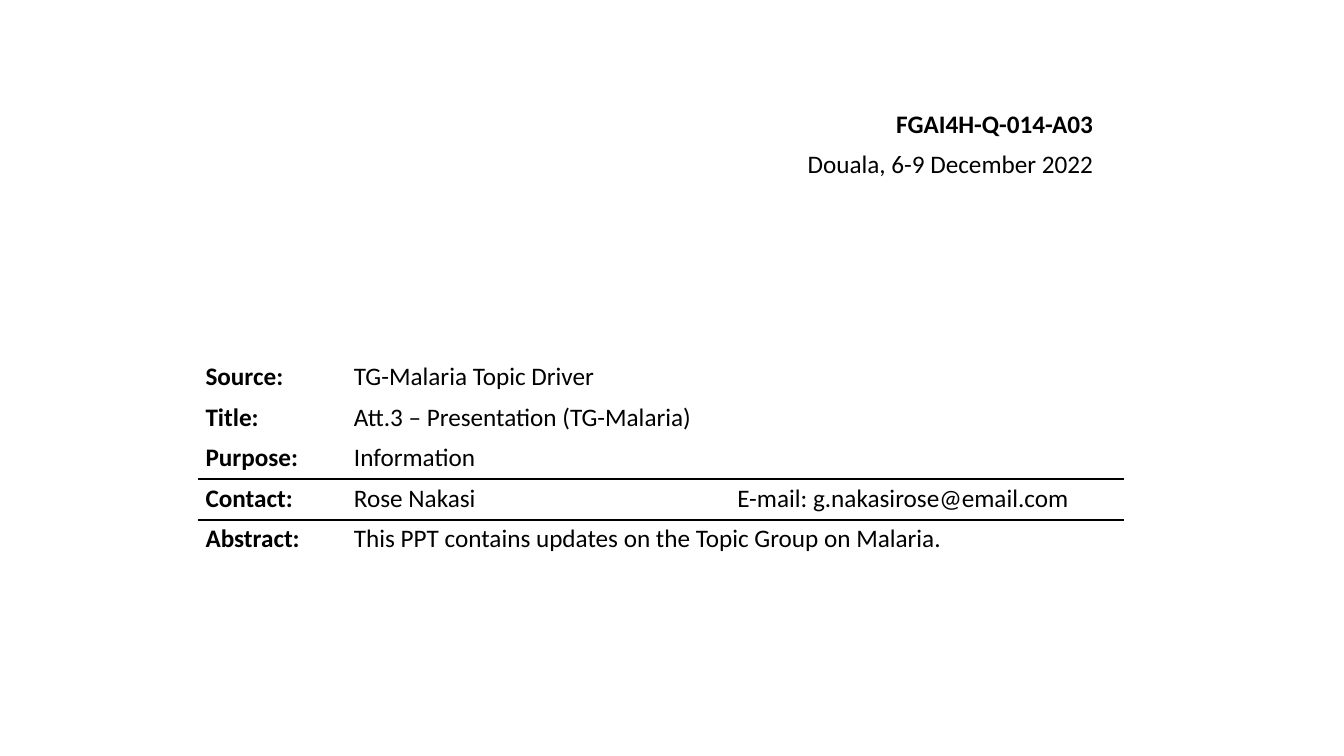
from lxml.etree import SubElement, Element
from pptx import Presentation
from pptx.dml.color import RGBColor as RGB
from pptx.enum.text import MSO_ANCHOR as Anchor, MSO_AUTO_SIZE as Fit, PP_ALIGN as Align
from pptx.oxml.ns import qn
from pptx.util import Cm, Pt

COLORS = {"ink": "000000", "paper": "FFFFFF"}
FONT = "Calibri"
PLAIN = "{2D5ABB26-0587-4C30-8999-92F81FD0307C}"  # no style, no grid
ROW = 1.02  # height of a line of text, in cm

FACTS = [
    ("Source:", "TG-Malaria Topic Driver"),
    ("Title:", "Att.3 – Presentation (TG-Malaria)"),
    ("Purpose:", "Information"),
    ("Contact:", "Rose Nakasi", "E-mail: g.nakasirose@email.com"),
    ("Abstract:", "This PPT contains updates on the Topic Group on Malaria."),
]
CONTACT = 3  # the row ruled above and below


def write(frame, text, bold=False, align=Align.LEFT):
    frame.text = text
    para = frame.paragraphs[0]
    para.alignment = align
    for run in para.runs:
        font = run.font
        font.name, font.size, font.bold = FONT, Pt(18), bold
        font.color.rgb = RGB.from_string(COLORS["ink"])


def rule(cell, sides):
    """Draw black lines on the given sides, listed top first."""
    props = cell._tc.get_or_add_tcPr()
    for place, side in enumerate(sides):
        line = Element(qn("a:ln" + side), w=str(Pt(1.5)))
        fill = SubElement(line, qn("a:solidFill"))
        SubElement(fill, qn("a:srgbClr"), val=COLORS["ink"])
        props.insert(place, line)


def head(slide, left, top, width):
    """Document number and meeting, set flush right."""
    number = slide.shapes.title
    meeting = slide.shapes.add_textbox(0, 0, 0, 0)
    lines = [(number, "FGAI4H-Q-014-A03", True),
             (meeting, "Douala, 6-9 December 2022", False)]
    for i, (box, text, bold) in enumerate(lines):
        box.left, box.top = Cm(left), Cm(top + i * ROW)
        box.width, box.height = Cm(width), Cm(ROW)
        frame = box.text_frame
        frame.word_wrap, frame.auto_size = False, Fit.NONE
        frame.vertical_anchor = Anchor.TOP
        write(frame, text, bold, Align.RIGHT)


def facts(slide, left, top, widths):
    """Table of labels and details."""
    frame = slide.shapes.add_table(
        len(FACTS), len(widths), Cm(left), Cm(top),
        Cm(sum(widths)), Cm(ROW * len(FACTS)))
    table = frame.table
    table.first_row = table.horz_banding = False
    table._tbl.tblPr.find(qn("a:tableStyleId")).text = PLAIN
    for col, width in zip(table.columns, widths):
        col.width = Cm(width)

    # Lines shared with the rows next to the contact row
    sides = {CONTACT - 1: "B", CONTACT: "TB", CONTACT + 1: "T"}
    for r, texts in enumerate(FACTS):
        table.rows[r].height = Cm(ROW)
        if len(texts) < len(widths):
            table.cell(r, 1).merge(table.cell(r, 2))
        for c in range(len(widths)):
            cell = table.cell(r, c)
            cell.fill.background()
            cell.margin_left = cell.margin_right = Cm(0.19)
            cell.margin_top = cell.margin_bottom = Cm(0.1)
            rule(cell, sides.get(r, ""))
        for c, text in enumerate(texts):
            write(table.cell(r, c).text_frame, text, bold=c == 0)


def main():
    deck = Presentation()
    deck.slide_width, deck.slide_height = Cm(33.87), Cm(19.05)
    slide = deck.slides.add_slide(deck.slide_layouts[5])
    back = slide.background.fill
    back.solid()
    back.fore_color.rgb = RGB.from_string(COLORS["paper"])
    head(slide, 20, 2.6, 7.8)
    facts(slide, 4.99, 9.02, [3.74, 9.66, 9.93])
    deck.save("out.pptx")


if __name__ == "__main__":
    main()
